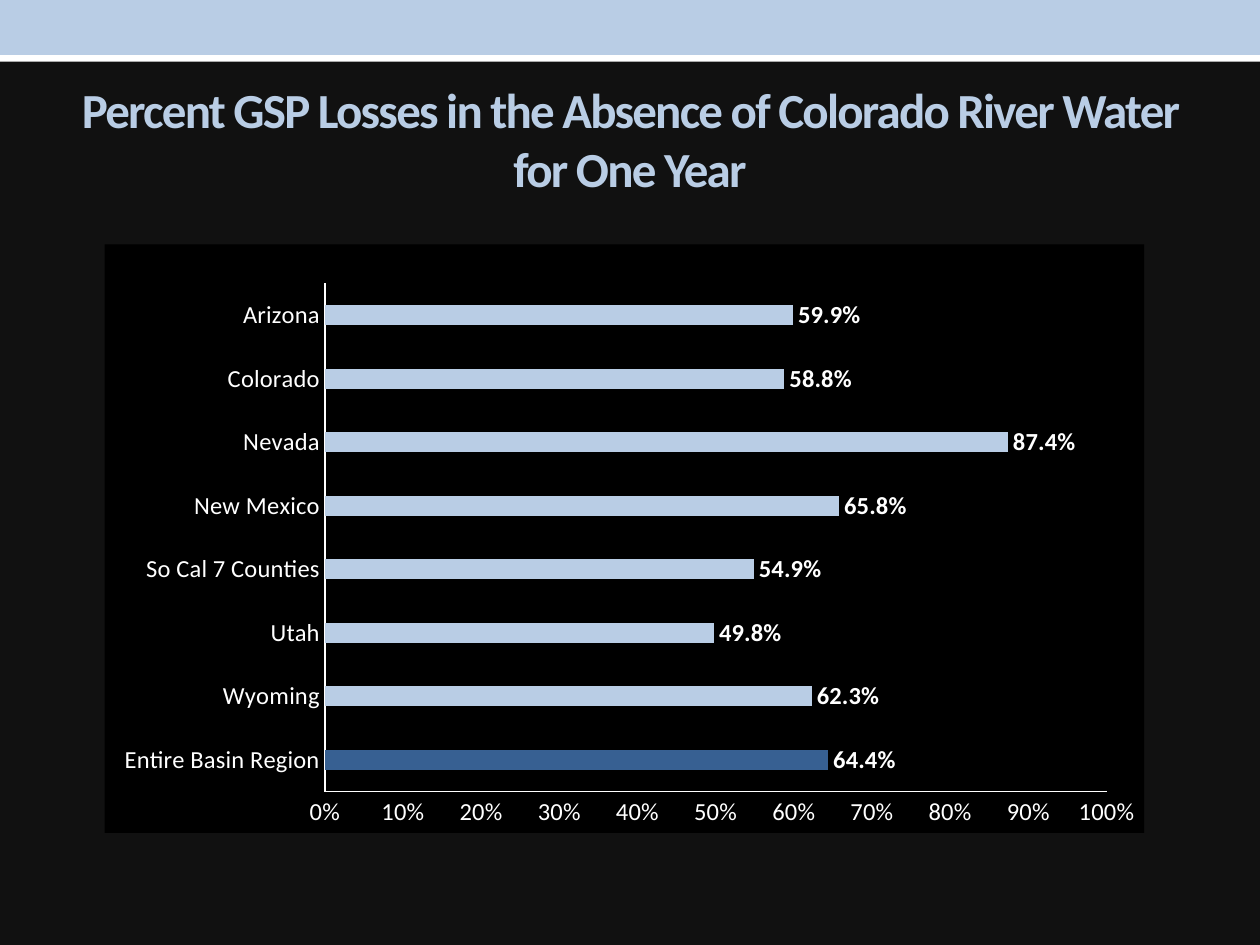
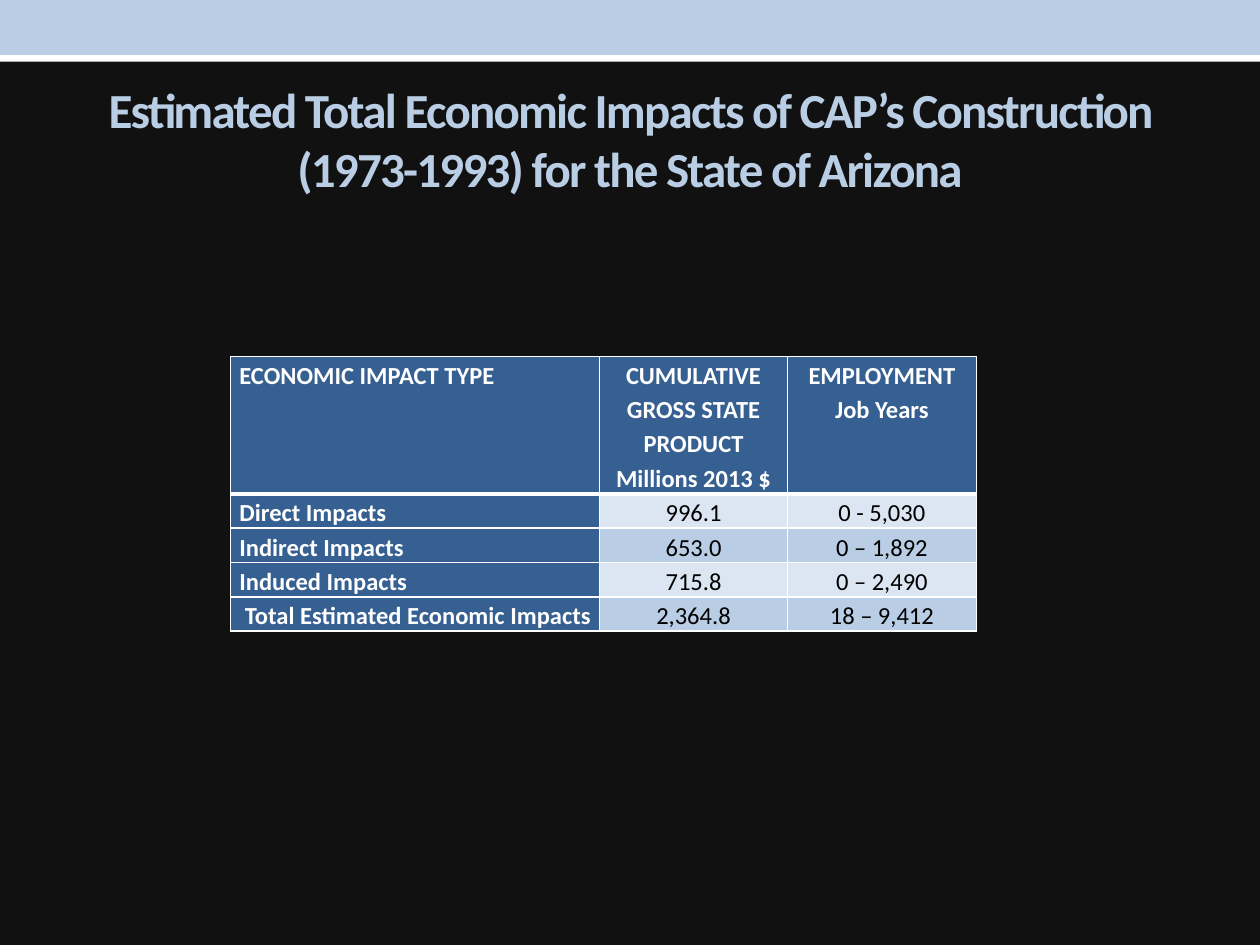
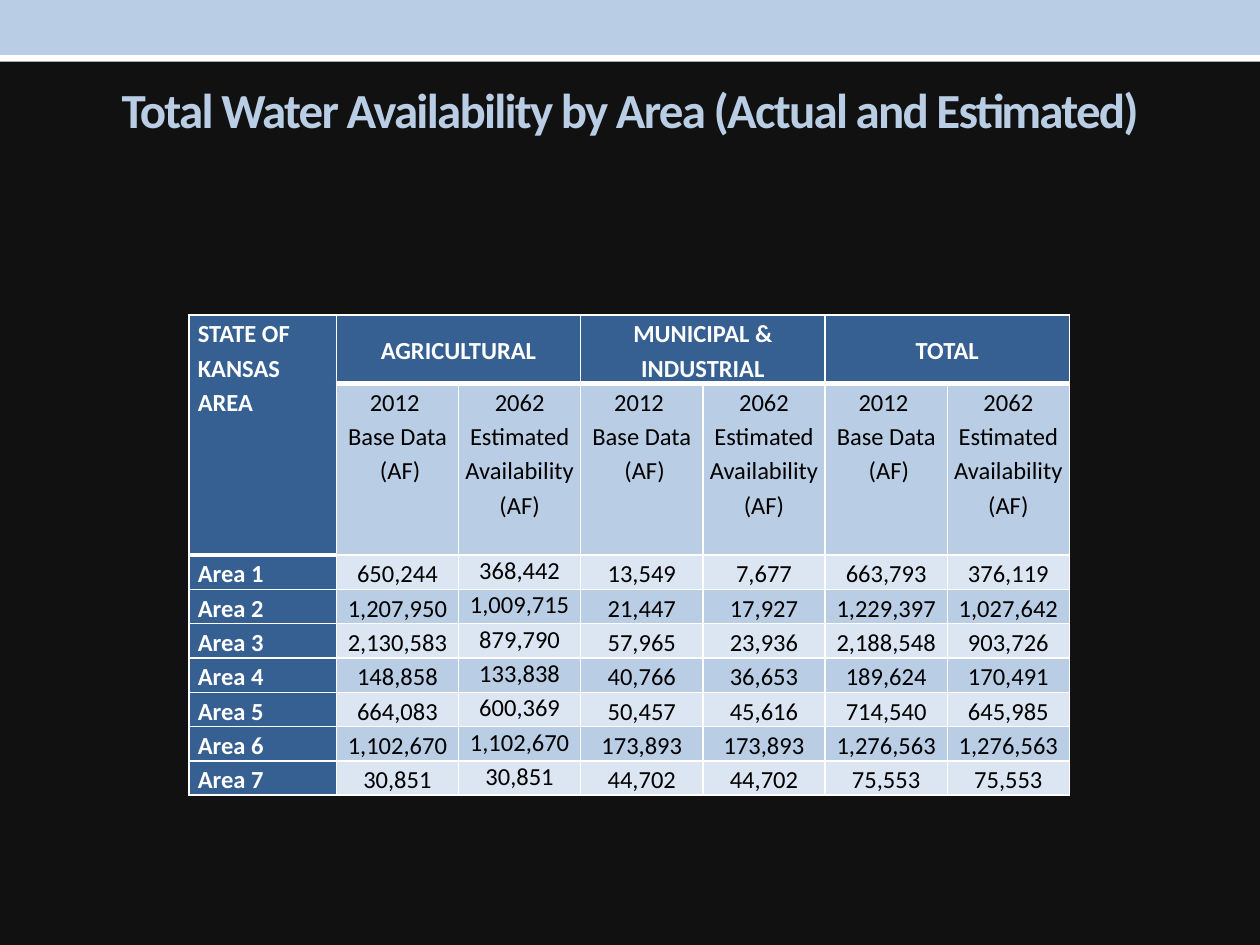
from dataclasses import dataclass, replace
from typing import Any

import lxml.etree
import pptx
import pptx.chart.data
import pptx.dml.color
import pptx.enum.chart
import pptx.enum.shapes
import pptx.enum.text
import pptx.oxml.ns
import pptx.util

Inches = pptx.util.Inches
Pt = pptx.util.Pt
ALIGN = pptx.enum.text.PP_ALIGN
ANCHOR = pptx.enum.text.MSO_ANCHOR
qn = pptx.oxml.ns.qn

COLORS = {
    "background": "111111",
    "black": "000000",
    "white": "FFFFFF",
    "sky": "B9CDE5",
    "pale": "DCE6F2",
    "navy": "376092",
}
FONT = "Calibri"


def rgb(color: str) -> pptx.dml.color.RGBColor:
    return pptx.dml.color.RGBColor.from_string(COLORS[color])


def apply(target: Any, values: dict[str, Any]) -> None:
    for attribute, value in values.items():
        setattr(target, attribute, value)


def set_font(font: Any, size: float, color: str, bold: bool = False) -> None:
    apply(font, {"name": FONT, "size": Pt(size), "bold": bold})
    font.color.rgb = rgb(color)


# Shared slide parts
@dataclass(frozen=True)
class Band:
    top: float
    height: float
    color: str
    line_width: float = 0


BANDS = (Band(0.24, 0.25, "white"), Band(0, 0.42, "sky", 2.08))


def draw_band(slide: Any, band: Band) -> None:
    shape = slide.shapes.add_shape(
        pptx.enum.shapes.MSO_SHAPE.RECTANGLE,
        Inches(0), Inches(band.top), Inches(10), Inches(band.height))
    shape.shadow.inherit = False
    shape.fill.solid()
    shape.fill.fore_color.rgb = rgb(band.color)
    if band.line_width:
        shape.line.color.rgb = rgb(band.color)
        shape.line.width = Pt(band.line_width)
    else:
        shape.line.fill.background()


def add_titled_slide(deck: Any, heading: str) -> Any:
    slide = deck.slides.add_slide(deck.slide_layouts[5])
    for band in BANDS:
        draw_band(slide, band)
    title = slide.shapes.title
    apply(title, {"left": Inches(0.5), "top": Inches(0.58),
                  "width": Inches(9), "height": Inches(1.08)})
    apply(title.text_frame, {"text": heading, "word_wrap": True,
                             "vertical_anchor": ANCHOR.TOP,
                             "auto_size": pptx.enum.text.MSO_AUTO_SIZE.NONE})
    paragraph = title.text_frame.paragraphs[0]
    paragraph.alignment = ALIGN.CENTER
    run = paragraph.runs[0]
    set_font(run.font, 28, "sky", True)
    run.font._element.set("spc", "-100")
    return slide


# Tables
@dataclass(frozen=True)
class CellStyle:
    fill: str
    color: str = "black"
    bold: bool = False
    align: Any = ALIGN.CENTER
    anchor: Any = ANCHOR.TOP
    spacing: float = 1.15
    side_inset: float = 0.07
    top_inset: float = 0


HEADER = CellStyle("navy", "white", True)
ROW_LABEL = replace(HEADER, align=ALIGN.LEFT, anchor=ANCHOR.MIDDLE)


def body_style(index: int) -> CellStyle:
    return CellStyle("sky" if index % 2 else "pale")


def add_grid(slide: Any, left: float, top: float,
             widths: list[float], heights: list[float]) -> Any:
    table = slide.shapes.add_table(
        len(heights), len(widths), Inches(left), Inches(top),
        Inches(sum(widths)), Inches(sum(heights))).table
    apply(table, {"first_row": False, "horz_banding": False})
    for column, width in zip(table.columns, widths):
        column.width = Inches(width)
    for row, height in zip(table.rows, heights):
        row.height = Inches(height)
    return table


def fill_cell(cell: Any, text: str, style: CellStyle,
              top_line: float = 1, bottom_line: float = 1) -> None:
    properties = cell._tc.get_or_add_tcPr()
    for side, width in {"L": 1, "R": 1, "T": top_line, "B": bottom_line}.items():
        line = lxml.etree.SubElement(properties, qn(f"a:ln{side}"), w=str(Pt(width)))
        paint = lxml.etree.SubElement(line, qn("a:solidFill"))
        lxml.etree.SubElement(paint, qn("a:srgbClr"), val=COLORS["white"])
    cell.fill.solid()
    cell.fill.fore_color.rgb = rgb(style.fill)
    apply(cell, {"text": text, "vertical_anchor": style.anchor,
                 "margin_left": Inches(style.side_inset),
                 "margin_right": Inches(style.side_inset),
                 "margin_top": Inches(style.top_inset), "margin_bottom": 0})
    for paragraph in cell.text_frame.paragraphs:
        apply(paragraph, {"alignment": style.align, "line_spacing": style.spacing})
        set_font(paragraph.font, 14, style.color, style.bold)
        for run in paragraph.runs:
            set_font(run.font, 14, style.color, style.bold)


# Slide 1: losses by state
LOSSES = {
    "Entire Basin Region": 0.644,
    "Wyoming": 0.623,
    "Utah": 0.498,
    "So Cal 7 Counties": 0.549,
    "New Mexico": 0.658,
    "Nevada": 0.874,
    "Colorado": 0.588,
    "Arizona": 0.599,
}
PLOT_AREA = {"x": 0.212, "y": 0.066, "w": 0.752, "h": 0.864}


def place_plot(chart: Any) -> None:
    plot_area = chart._chartSpace.chart.plotArea
    for layout in plot_area.findall(qn("c:layout")):
        plot_area.remove(layout)
    layout = lxml.etree.Element(qn("c:layout"))
    manual = lxml.etree.SubElement(layout, qn("c:manualLayout"))
    settings = {"layoutTarget": "inner", "xMode": "edge", "yMode": "edge", **PLOT_AREA}
    for tag, value in settings.items():
        lxml.etree.SubElement(manual, qn(f"c:{tag}"), val=str(value))
    plot_area.insert(0, layout)


def fill_chart_area(chart: Any, color: str) -> None:
    area = lxml.etree.Element(qn("c:spPr"))
    paint = lxml.etree.SubElement(area, qn("a:solidFill"))
    lxml.etree.SubElement(paint, qn("a:srgbClr"), val=COLORS[color])
    outline = lxml.etree.SubElement(area, qn("a:ln"))
    lxml.etree.SubElement(outline, qn("a:noFill"))
    chart._chartSpace.chart.addnext(area)


def build_losses(deck: Any) -> None:
    slide = add_titled_slide(
        deck, "Percent GSP Losses in the Absence of Colorado River Water for One Year")
    data = pptx.chart.data.CategoryChartData(number_format="0.0%")
    data.categories = list(LOSSES)
    data.add_series("Series 1", list(LOSSES.values()))
    chart = slide.shapes.add_chart(
        pptx.enum.chart.XL_CHART_TYPE.BAR_CLUSTERED,
        Inches(0.83), Inches(1.94), Inches(8.25), Inches(4.67), data).chart
    apply(chart, {"has_legend": False, "has_title": False})
    set_font(chart.font, 10, "white")
    chart.font.name = "Arial"
    fill_chart_area(chart, "black")
    place_plot(chart)

    for axis in (chart.category_axis, chart.value_axis):
        apply(axis, {"has_major_gridlines": False,
                     "major_tick_mark": pptx.enum.chart.XL_TICK_MARK.NONE,
                     "minor_tick_mark": pptx.enum.chart.XL_TICK_MARK.NONE})
        set_font(axis.tick_labels.font, 14, "white")
        axis.format.line.color.rgb = rgb("white")
        axis.format.line.width = Pt(0.75)
    apply(chart.value_axis, {"minimum_scale": 0, "maximum_scale": 1, "major_unit": 0.1})
    apply(chart.value_axis.tick_labels,
          {"number_format": "0%", "number_format_is_linked": False})

    plot = chart.plots[0]
    apply(plot, {"gap_width": 219, "vary_by_categories": False})
    losses = plot.series[0]
    region = losses.points[0]
    for bar, color in ((losses, "sky"), (region, "navy")):
        bar.format.fill.solid()
        bar.format.fill.fore_color.rgb = rgb(color)
    labels = losses.data_labels
    apply(labels, {"show_value": True, "number_format": "0.0%",
                   "number_format_is_linked": False,
                   "position": pptx.enum.chart.XL_LABEL_POSITION.OUTSIDE_END})
    set_font(labels.font, 14, "white", True)


# Slide 2: construction impacts
IMPACT_HEADINGS = (
    "ECONOMIC IMPACT TYPE",
    "CUMULATIVE GROSS STATE PRODUCT\nMillions 2013 $",
    "EMPLOYMENT\nJob Years",
)
IMPACTS = (
    ("Direct Impacts", "996.1", "0 - 5,030"),
    ("Indirect Impacts", "653.0", "0 – 1,892"),
    ("Induced Impacts", "715.8", "0 – 2,490"),
    ("Total Estimated Economic Impacts ", "2,364.8", "18 – 9,412"),
)


def build_impacts(deck: Any) -> None:
    slide = add_titled_slide(
        deck, "Estimated Total Economic Impacts of CAP’s Construction "
              "(1973-1993) for the State of Arizona")
    table = add_grid(slide, 1.83, 2.83, [2.93, 1.49, 1.5],
                     [1.09] + [0.27] * len(IMPACTS))
    for column, heading in enumerate(IMPACT_HEADINGS):
        align = ALIGN.CENTER if column else ALIGN.LEFT
        fill_cell(table.cell(0, column), heading, replace(HEADER, align=align),
                  bottom_line=3)
    for index, impact in enumerate(IMPACTS):
        is_total = index == len(IMPACTS) - 1
        for column, text in enumerate(impact):
            style = replace(body_style(index), anchor=ANCHOR.BOTTOM)
            if column == 0:
                style = replace(ROW_LABEL, align=ALIGN.RIGHT if is_total else ALIGN.LEFT)
            fill_cell(table.cell(index + 1, column), text, style,
                      top_line=1 if index else 3)


# Slide 3: water availability
USES = ("AGRICULTURAL", "MUNICIPAL & INDUSTRIAL", "TOTAL")
BASE_HEADING = "2012 \nBase Data\n (AF)"
ESTIMATE_HEADING = "2062 Estimated Availability (AF)"
AVAILABILITY = (
    ("650,244", "368,442", "13,549", "7,677", "663,793", "376,119"),
    ("1,207,950", "1,009,715", "21,447", "17,927", "1,229,397", "1,027,642"),
    ("2,130,583", "879,790", "57,965", "23,936", "2,188,548", "903,726"),
    ("148,858", "133,838", "40,766", "36,653", "189,624", "170,491"),
    ("664,083", "600,369", "50,457", "45,616", "714,540", "645,985"),
    ("1,102,670", "1,102,670", "173,893", "173,893", "1,276,563", "1,276,563"),
    ("30,851", "30,851", "44,702", "44,702", "75,553", "75,553"),
)


def build_availability(deck: Any) -> None:
    slide = add_titled_slide(
        deck, "Total Water Availability by Area (Actual and Estimated)")
    table = add_grid(slide, 1.5, 2.5, [1.17] + [0.97] * 6,
                     [0.54, 1.36] + [0.27] * len(AVAILABILITY))

    # Two header rows
    for row, text in enumerate(("STATE OF KANSAS AREA", "")):
        fill_cell(table.cell(row, 0), text, replace(HEADER, align=ALIGN.LEFT),
                  bottom_line=3)
    table.cell(0, 0).merge(table.cell(1, 0))
    for index, use in enumerate(USES):
        base = 1 + 2 * index
        for column, text in ((base, use), (base + 1, "")):
            fill_cell(table.cell(0, column), text,
                      replace(HEADER, anchor=ANCHOR.MIDDLE), bottom_line=3)
        table.cell(0, base).merge(table.cell(0, base + 1))
        fill_cell(table.cell(1, base), BASE_HEADING, CellStyle("sky"), top_line=3)
        fill_cell(table.cell(1, base + 1), ESTIMATE_HEADING,
                  CellStyle("sky", side_inset=0), top_line=3)

    # Areas
    for index, amounts in enumerate(AVAILABILITY):
        row = index + 2
        fill_cell(table.cell(row, 0), f"Area {index + 1}", ROW_LABEL,
                  top_line=1 if index else 3)
        plain = body_style(index)
        tight = replace(plain, spacing=1.0, side_inset=0.01, top_inset=0.01)
        styles = {2: tight, 4: replace(tight, anchor=ANCHOR.BOTTOM)}
        for column, amount in enumerate(amounts, start=1):
            fill_cell(table.cell(row, column), amount, styles.get(column, plain))


def main() -> None:
    deck = pptx.Presentation()
    apply(deck, {"slide_width": Inches(10), "slide_height": Inches(7.5)})
    backdrop = deck.slide_master.background.fill
    backdrop.solid()
    backdrop.fore_color.rgb = rgb("background")
    for build in (build_losses, build_impacts, build_availability):
        build(deck)
    deck.save("out.pptx")


if __name__ == "__main__":
    main()
